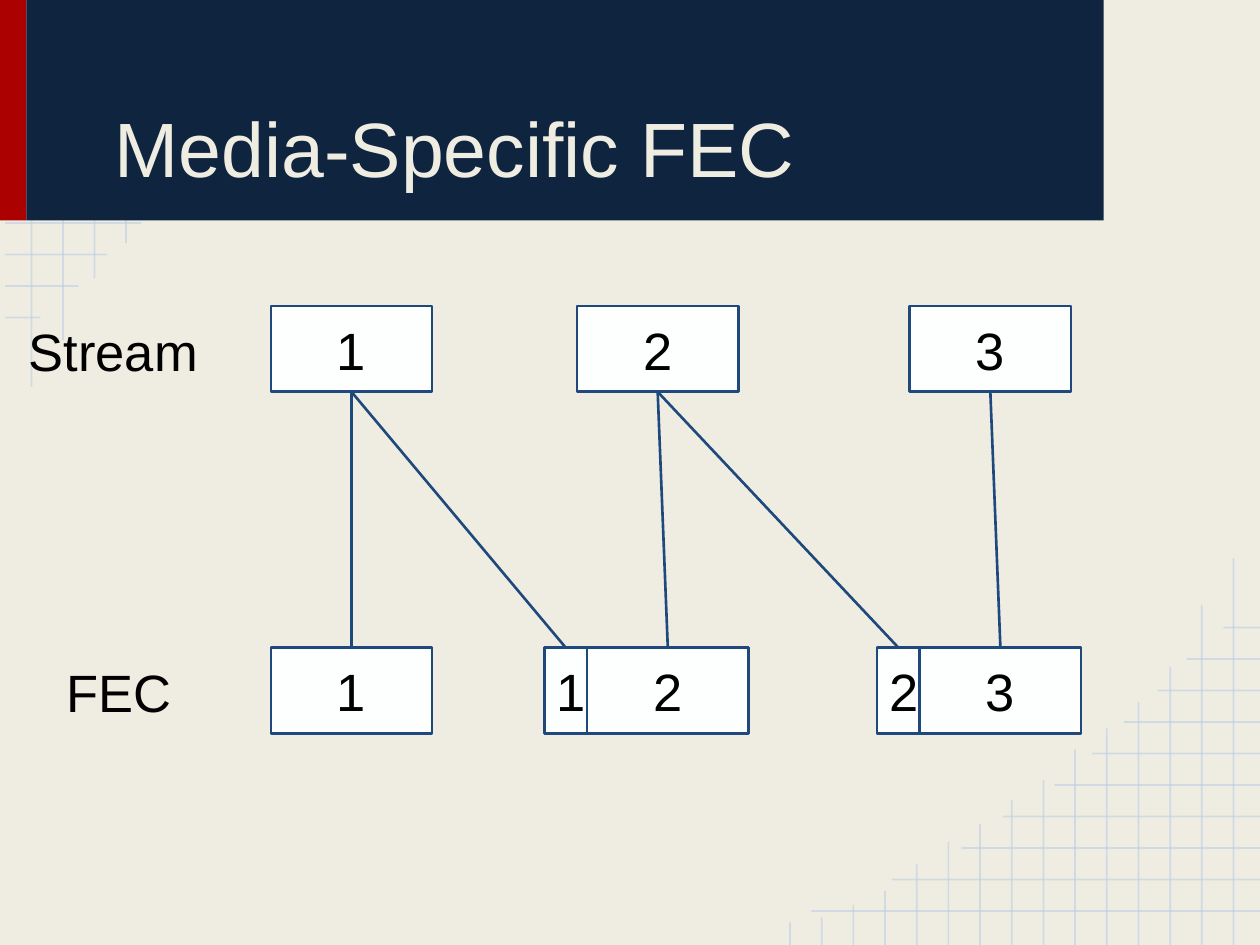
from lxml import etree
from pptx import Presentation
from pptx.dml.color import RGBColor
from pptx.enum.shapes import MSO_CONNECTOR, MSO_SHAPE
from pptx.enum.text import MSO_ANCHOR, PP_ALIGN
from pptx.oxml.ns import qn
from pptx.util import Inches, Pt

STRAIGHT = MSO_CONNECTOR.STRAIGHT
RECTANGLE = MSO_SHAPE.RECTANGLE
LEFT, CENTER = PP_ALIGN.LEFT, PP_ALIGN.CENTER
TOP, MIDDLE, BOTTOM = MSO_ANCHOR.TOP, MSO_ANCHOR.MIDDLE, MSO_ANCHOR.BOTTOM
BOTTOM_SIDE, TOP_SIDE = 2, 0

COLORS = {
    name: RGBColor.from_string(value)
    for name, value in {
        "cream": "EFEDE2",
        "grid": "B7CCE4",
        "red": "AB0101",
        "navy": "0F243E",
        "box": "FDFFFF",
        "outline": "1F497D",
        "black": "000000",
    }.items()
}

presentation = Presentation()
presentation.slide_width = Inches(10)
presentation.slide_height = Inches(7.5)
slide = presentation.slides.add_slide(presentation.slide_layouts[6])
slide.background.fill.solid()
slide.background.fill.fore_color.rgb = COLORS["cream"]


def add_line(start, end, color, width):
    line = slide.shapes.add_connector(
        STRAIGHT, *(Inches(value) for value in (*start, *end))
    )
    line.line.color.rgb = COLORS[color]
    line.line.width = Pt(width)
    etree.SubElement(line._element.spPr, qn("a:effectLst"))
    return line


def write_text(shape, text, size, color, alignment, anchor):
    frame = shape.text_frame
    margins = {f"margin_{side}": Inches(0.1) for side in ("left", "top", "right", "bottom")}
    for name, value in {**margins, "word_wrap": True, "vertical_anchor": anchor}.items():
        setattr(frame, name, value)
    paragraph = frame.paragraphs[0]
    paragraph.alignment = alignment
    run = paragraph.add_run()
    run.text = text
    for name, value in {"name": "Arial", "size": Pt(size)}.items():
        setattr(run.font, name, value)
    run.font.color.rgb = COLORS[color]
    return paragraph


# Faded grids in the upper left and lower right corners
pitch = 0.25
left_row_ends = [1.12, 0.85, 0.62, 0.32]
left_column_ends = [3.07, 2.7, 2.21, 1.93]
right_row_starts = [6.44, 7.08, 7.63, 7.96, 8.37, 8.67, 8.92, 9.19, 9.42, 9.71]
right_column_starts = [4.43, 4.8, 5.29, 5.57, 5.78, 5.95, 6.19, 6.35,
                       6.54, 6.68, 6.86, 7.07, 7.18, 7.28, 7.32]
right_column_pitch = (9.79 - 6.27) / (len(right_column_starts) - 1)

grid_lines = []
for index, end in enumerate(left_row_ends):
    y = 1.77 + index * pitch
    grid_lines.append(((0.04, y), (end, y)))
for index, end in enumerate(left_column_ends):
    x = 0.25 + index * pitch
    grid_lines.append(((x, end), (x, 0)))
for index, start in enumerate(right_row_starts):
    y = 7.23 - index * pitch
    grid_lines.append(((10, y), (start, y)))
for index, start in enumerate(right_column_starts):
    x = 9.79 - index * right_column_pitch
    grid_lines.append(((x, start), (x, 7.5)))

for start, end in grid_lines:
    line = add_line(start, end, "grid", 1)
    color_element = line._element.spPr.find(".//" + qn("a:srgbClr"))
    etree.SubElement(color_element, qn("a:alpha"), val="54000")

# Title banner
for left, width, color in [(0, 0.21, "red"), (0.21, 8.55, "navy")]:
    band = slide.shapes.add_shape(
        RECTANGLE, Inches(left), Inches(-0.01), Inches(width), Inches(1.76)
    )
    band.shadow.inherit = False
    band.fill.solid()
    band.fill.fore_color.rgb = COLORS[color]
    band.line.fill.background()

title = slide.shapes.add_textbox(Inches(0.5), Inches(0.15), Inches(8), Inches(1.48))
title_paragraph = write_text(title, "Media-Specific FEC", 44, "cream", LEFT, BOTTOM)
title_paragraph._p.get_or_add_pPr().set("indent", str(Inches(0.31)))

# Packets of the stream and of the FEC data; narrow ones are redundant copies
stream_top, fec_top = 2.43, 5.14
packet_width, redundant_width, packet_height = 1.28, 0.34, 0.68
packets = {}
for key, text, left, top, width in [
    ("stream 1", "1", 2.15, stream_top, packet_width),
    ("stream 2", "2", 4.58, stream_top, packet_width),
    ("stream 3", "3", 7.22, stream_top, packet_width),
    ("fec 1", "1", 2.15, fec_top, packet_width),
    ("fec 2", "2", 4.66, fec_top, packet_width),
    ("fec 3", "3", 7.3, fec_top, packet_width),
    ("redundant 1", "1", 4.66 - redundant_width, fec_top, redundant_width),
    ("redundant 2", "2", 7.3 - redundant_width, fec_top, redundant_width),
]:
    packet = slide.shapes.add_shape(
        RECTANGLE, Inches(left), Inches(top), Inches(width), Inches(packet_height)
    )
    packet.shadow.inherit = False
    packet.fill.solid()
    packet.fill.fore_color.rgb = COLORS["box"]
    packet.line.color.rgb = COLORS["outline"]
    packet.line.width = Pt(1.5)
    write_text(packet, text, 30, "black", CENTER, MIDDLE)
    packets[key] = packet

for source, target in [
    ("stream 1", "fec 1"),
    ("stream 1", "redundant 1"),
    ("stream 2", "fec 2"),
    ("stream 2", "redundant 2"),
    ("stream 3", "fec 3"),
]:
    link = add_line((0, 0), (1, 1), "outline", 1.5)
    link.begin_connect(packets[source], BOTTOM_SIDE)
    link.end_connect(packets[target], TOP_SIDE)

# Row labels
for text, left, top, width, height in [
    ("Stream", 0.13, stream_top, 1.84, 0.65),
    ("FEC", 0.43, fec_top, 1.72, 1.16),
]:
    label = slide.shapes.add_textbox(
        Inches(left), Inches(top), Inches(width), Inches(height)
    )
    write_text(label, text, 30, "black", LEFT, TOP)

presentation.save("out.pptx")
